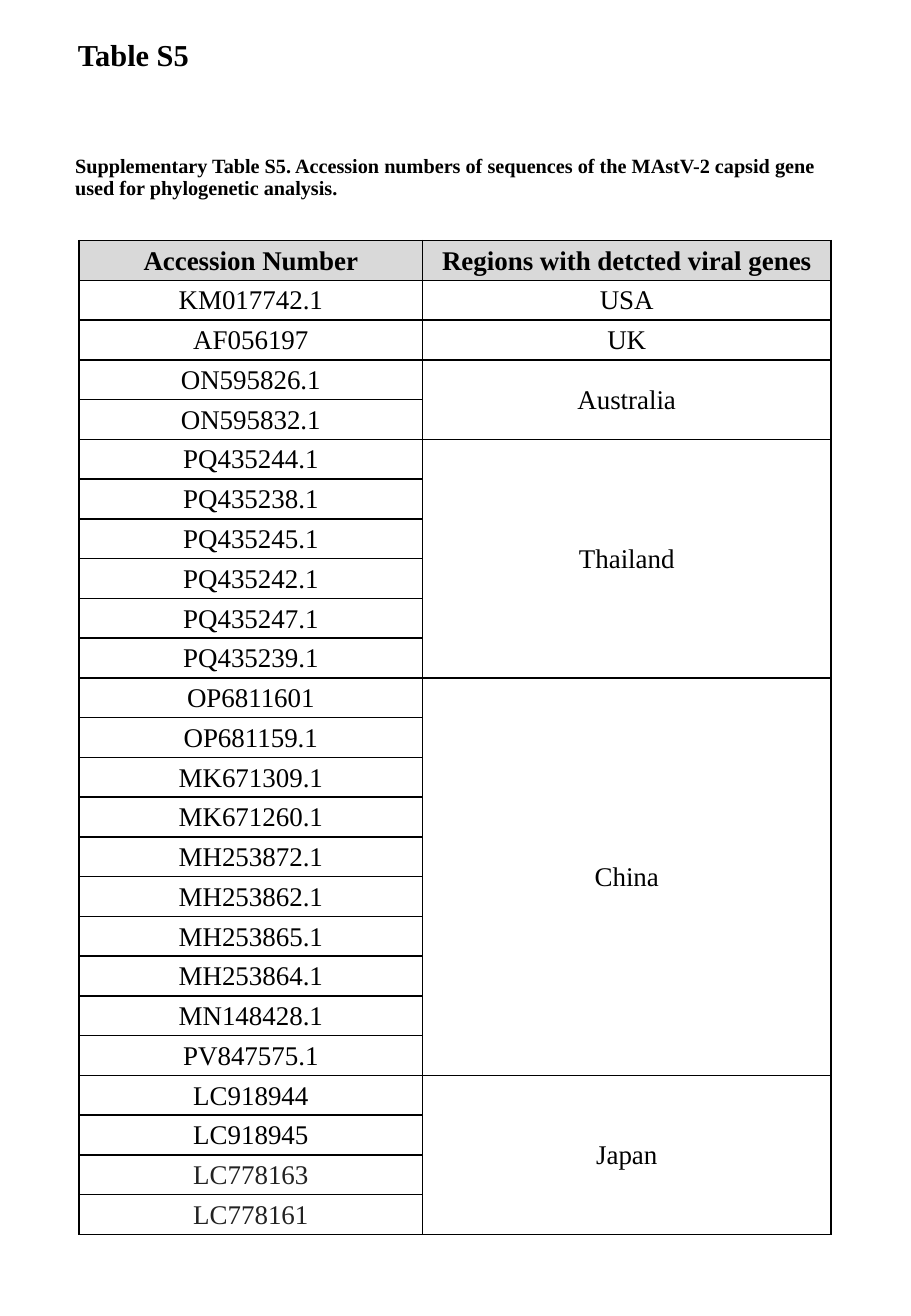
from dataclasses import dataclass

from lxml import etree
from pptx import Presentation, util as u
from pptx.dml.color import RGBColor
from pptx.enum import text as t
from pptx.oxml import ns


@dataclass(frozen=True)
class Theme:
    font: str = "Times New Roman"
    ink: str = "000000"
    soft: str = "222222"
    head: str = "D9D9D9"
    title: int = 18
    note: int = 12
    cell: int = 16
    line: int = 1


LOOK = Theme()
WIDE, HIGH = u.Inches(7.5), u.Inches(10.83)
COL, ROW = WIDE / 75, HIGH / 108.3

HEADS = ("Accession Number", "Regions with detcted viral genes")
REGIONS = {
    "USA": ["KM017742.1"],
    "UK": ["AF056197"],
    "Australia": ["ON595826.1", "ON595832.1"],
    "Thailand": ["PQ435244.1", "PQ435238.1", "PQ435245.1",
                 "PQ435242.1", "PQ435247.1", "PQ435239.1"],
    "China": ["OP6811601", "OP681159.1", "MK671309.1", "MK671260.1",
              "MH253872.1", "MH253862.1", "MH253865.1", "MH253864.1",
              "MN148428.1", "PV847575.1"],
    "Japan": ["LC918944", "LC918945", "LC778163", "LC778161"],
}
SOFT = {"LC778163", "LC778161"}


def grid(x, y, w, h):
    """Turn grid columns and rows into left, top, width and height."""
    return int(x * COL), int(y * ROW), int(w * COL), int(h * ROW)


def write(frame, words, size, bold=False, color=LOOK.ink,
          align=t.PP_ALIGN.LEFT, lead=1.0, after=0):
    frame.word_wrap = True
    para = frame.paragraphs[0]
    para.alignment = align
    para.line_spacing = lead
    para.space_before, para.space_after = u.Pt(0), u.Pt(after)
    run = para.add_run()
    run.text = words
    font = run.font
    font.name, font.size, font.bold = LOOK.font, u.Pt(size), bold
    font.color.rgb = RGBColor.from_string(color)


def add_title(slide, words):
    title = slide.shapes.title
    title.left, title.top, title.width, title.height = grid(5.4, 2.5, 16.2, 4)
    frame = title.text_frame
    frame.auto_size = t.MSO_AUTO_SIZE.NONE
    frame.vertical_anchor = t.MSO_ANCHOR.TOP
    write(frame, words, LOOK.title, bold=True)


def add_note(slide, words):
    frame = slide.shapes.add_textbox(*grid(5.2, 11.7, 64.7, 5.9)).text_frame
    frame.vertical_anchor = t.MSO_ANCHOR.MIDDLE
    write(frame, words, LOOK.note, bold=True, lead=0.9, after=6)


def frame_cell(cell):
    """Draw a line on all four sides, ahead of the fill in the cell's XML."""
    props = cell._tc.get_or_add_tcPr()
    for spot, side in enumerate(("lnL", "lnR", "lnT", "lnB")):
        line = etree.Element(ns.qn(f"a:{side}"), w=str(u.Pt(LOOK.line)))
        fill = etree.SubElement(line, ns.qn("a:solidFill"))
        etree.SubElement(fill, ns.qn("a:srgbClr"), val=LOOK.ink)
        props.insert(spot, line)


def fill_cell(cell, words, head=False):
    cell.vertical_anchor = t.MSO_ANCHOR.MIDDLE
    cell.margin_left = cell.margin_right = cell.margin_top = u.Inches(0.01)
    cell.margin_bottom = 0
    write(cell.text_frame, words, LOOK.cell, bold=head,
          color=LOOK.soft if words in SOFT else LOOK.ink,
          align=t.PP_ALIGN.CENTER)
    if head:
        cell.fill.solid()
        cell.fill.fore_color.rgb = RGBColor.from_string(LOOK.head)


def add_list(slide):
    count = 1 + sum(map(len, REGIONS.values()))
    table = slide.shapes.add_table(
        count, 2, *grid(6.5, 19.8, 61.9, 81.8)).table
    table.first_row = table.horz_banding = False
    for col, width in zip(table.columns, (28.3, 33.6)):
        col.width = int(width * COL)
    for row in table.rows:
        row.height = int(81.8 * ROW / count)
    for cell in table.iter_cells():
        cell.fill.background()
        frame_cell(cell)

    for col, words in enumerate(HEADS):
        fill_cell(table.cell(0, col), words, head=True)
    top = 1
    for region, codes in REGIONS.items():
        for row, code in enumerate(codes, top):
            fill_cell(table.cell(row, 0), code)
        first = table.cell(top, 1)
        if len(codes) > 1:
            first.merge(table.cell(top + len(codes) - 1, 1))
        fill_cell(first, region)
        top += len(codes)


def main():
    deck = Presentation()
    deck.slide_width, deck.slide_height = WIDE, HIGH
    slide = deck.slides.add_slide(deck.slide_layouts.get_by_name("Title Only"))
    add_title(slide, "Table S5")
    add_note(slide, "Supplementary Table S5. Accession numbers of sequences "
                    "of the MAstV-2 capsid gene used for phylogenetic "
                    "analysis.")
    add_list(slide)
    deck.save("out.pptx")


if __name__ == "__main__":
    main()
